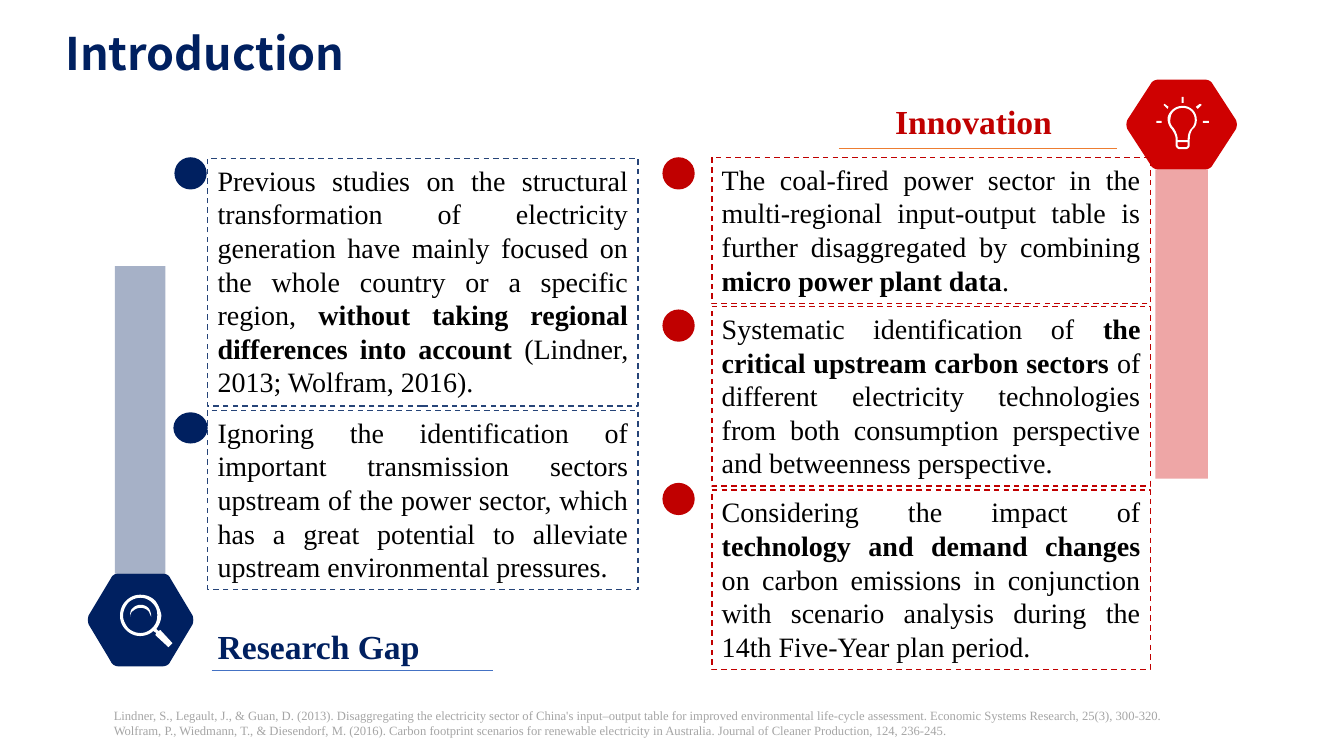
"""Build the Introduction slide: research gap on the left, innovation on the right."""
from lxml import etree
from pptx import Presentation
from pptx import util as u
from pptx.dml.color import RGBColor
from pptx.enum import dml, shapes, text
from pptx.oxml import ns

SERIF, SANS = "Times New Roman", "Noto Sans CJK SC"
NAVY, RED, BADGE_RED, BLUE_DASH = "002060", "C00000", "CF0101", "264478"
LEFT, CENTER, JUSTIFY = text.PP_ALIGN.LEFT, text.PP_ALIGN.CENTER, text.PP_ALIGN.JUSTIFY

COLUMNS = [
    (2.06, 4.27, BLUE_DASH, [
        (1.57, 2.46, [
            ("Previous studies on the structural transformation of electricity generation have mainly "
             "focused on the whole country or a specific region, ", False),
            ("without taking regional differences into account ", True),
            ("(Lindner, 2013; Wolfram, 2016).", False)]),
        (4.07, 1.78, [
            ("Ignoring the identification of important transmission sectors upstream of the power sector, "
             "which has a great potential to alleviate upstream environmental pressures.", False)]),
    ]),
    (7.06, 4.35, RED, [
        (1.56, 1.45, [
            ("The coal-fired power sector in the multi-regional input-output table is further "
             "disaggregated by combining ", False),
            ("micro power plant data", True), (".", False)]),
        (3.04, 1.78, [
            ("Systematic identification of ", False),
            ("the critical upstream carbon sectors", True),
            (" of different electricity technologies from both consumption perspective and "
             "betweenness perspective.", False)]),
        (4.86, 1.78, [
            ("Considering the impact of ", False),
            ("technology and demand changes ", True),
            ("on carbon emissions in conjunction with scenario analysis during the 14th Five-Year "
             "plan period.", False)]),
    ]),
]
DOTS = [(1.73, 1.56, 0.32, 0.32, NAVY), (1.72, 4.09, 0.34, 0.31, NAVY),
        (6.57, 1.56, 0.32, 0.32, RED), (6.57, 3.07, 0.32, 0.32, RED), (6.57, 4.79, 0.32, 0.32, RED)]
BARS = [(1.14, 2.64, 0.5, 3.05, NAVY), (11.46, 1.68, 0.52, 3.07, BADGE_RED)]
BADGES = [(0.87, 5.69, 1.05, 0.92, NAVY), (11.17, 0.79, 1.1, 0.89, BADGE_RED)]
RULES = [(2.1, 4.89, 6.65, "4472C4"), (8.32, 11.08, 1.47, "ED7D31")]
REFERENCES = [
    "Lindner, S., Legault, J., & Guan, D. (2013). Disaggregating the electricity sector of China's "
    "input–output table for improved environmental life-cycle assessment. Economic Systems Research, "
    "25(3), 300-320.",
    "Wolfram, P., Wiedmann, T., & Diesendorf, M. (2016). Carbon footprint scenarios for renewable "
    "electricity in Australia. Journal of Cleaner Production, 124, 236-245.",
]

HEXAGON = [[(0.99, 0.45), (0.78, 0.05), (0.77, 0.02, 0.74, 0, 0.71, 0), (0.29, 0),
            (0.26, 0, 0.23, 0.02, 0.22, 0.05), (0.01, 0.45), (0, 0.48, 0, 0.52, 0.01, 0.55),
            (0.22, 0.95), (0.23, 0.98, 0.26, 1, 0.29, 1), (0.71, 1),
            (0.74, 1, 0.77, 0.98, 0.78, 0.95), (0.99, 0.55), (1, 0.52, 1, 0.48, 0.99, 0.45)]]
MAGNIFIER = [
    [(1.47, 6.03), (1.49, 6.05, 1.5, 6.09, 1.5, 6.12), (1.49, 6.1, 1.48, 6.07, 1.47, 6.06),
     (1.43, 6.02, 1.36, 6.02, 1.32, 6.06), (1.3, 6.07, 1.29, 6.1, 1.29, 6.12),
     (1.29, 6.09, 1.29, 6.05, 1.32, 6.03), (1.36, 5.99, 1.43, 5.99, 1.47, 6.03)],
    [(1.71, 6.38), (1.67, 6.42), (1.54, 6.3), (1.55, 6.28), (1.52, 6.26),
     (1.49, 6.29, 1.44, 6.31, 1.39, 6.31), (1.34, 6.31, 1.29, 6.29, 1.25, 6.25),
     (1.21, 6.21, 1.19, 6.16, 1.19, 6.11), (1.19, 6.05, 1.21, 6, 1.25, 5.96),
     (1.29, 5.92, 1.34, 5.9, 1.39, 5.9), (1.45, 5.9, 1.5, 5.92, 1.54, 5.96),
     (1.57, 6, 1.59, 6.05, 1.6, 6.1), (1.6, 6.15, 1.58, 6.2, 1.55, 6.24),
     (1.57, 6.26), (1.59, 6.25)],
    [(1.51, 6.23), (1.55, 6.19, 1.56, 6.15, 1.56, 6.1), (1.56, 6.06, 1.55, 6.02, 1.51, 5.98),
     (1.48, 5.95, 1.44, 5.93, 1.39, 5.93), (1.35, 5.93, 1.3, 5.95, 1.27, 5.98),
     (1.24, 6.02, 1.22, 6.06, 1.22, 6.11), (1.22, 6.15, 1.24, 6.19, 1.27, 6.23),
     (1.3, 6.26, 1.35, 6.28, 1.39, 6.28), (1.44, 6.28, 1.48, 6.26, 1.51, 6.23)],
]
BULB = [
    [(11.68, 1.41), (11.68, 1.44), (11.68, 1.45, 11.69, 1.46, 11.7, 1.46), (11.76, 1.46),
     (11.77, 1.46, 11.78, 1.45, 11.78, 1.44), (11.78, 1.41)],
    [(11.73, 1.07), (11.66, 1.07, 11.61, 1.12, 11.61, 1.17), (11.6, 1.21, 11.61, 1.24, 11.64, 1.27),
     (11.66, 1.3, 11.68, 1.34, 11.68, 1.38), (11.68, 1.39), (11.78, 1.39), (11.78, 1.38),
     (11.78, 1.34, 11.79, 1.3, 11.82, 1.27), (11.84, 1.25, 11.85, 1.22, 11.85, 1.19),
     (11.85, 1.12, 11.8, 1.07, 11.73, 1.07)],
    [(11.73, 1.05), (11.81, 1.05, 11.87, 1.11, 11.87, 1.19), (11.87, 1.22, 11.86, 1.26, 11.83, 1.28),
     (11.81, 1.31, 11.8, 1.34, 11.8, 1.38), (11.8, 1.44), (11.8, 1.46, 11.78, 1.48, 11.76, 1.48),
     (11.7, 1.48), (11.68, 1.48, 11.66, 1.46, 11.66, 1.44), (11.66, 1.38),
     (11.66, 1.34, 11.64, 1.31, 11.62, 1.28), (11.59, 1.25, 11.58, 1.21, 11.58, 1.17),
     (11.59, 1.11, 11.65, 1.05, 11.73, 1.05)],
    [(11.93, 1.2), (11.99, 1.2), (11.99, 1.22), (11.93, 1.22)],
    [(11.47, 1.2), (11.52, 1.2), (11.52, 1.22), (11.47, 1.22)],
    [(11.9, 1.03), (11.92, 1.04), (11.88, 1.08), (11.86, 1.06)],
    [(11.55, 1.03), (11.59, 1.06), (11.58, 1.08), (11.54, 1.04)],
    [(11.72, 0.96), (11.74, 0.96), (11.74, 1.02), (11.72, 1.02)],
]


def rgb(color):
    return RGBColor.from_string(color)


def paint(sp, fill=None, dash=None, alpha=None):
    sp.shadow.inherit = False
    if fill:
        sp.fill.solid()
        sp.fill.fore_color.rgb = rgb(fill)
    else:
        sp.fill.background()
    if alpha:
        clr = sp.fill._xPr.find(".//" + ns.qn("a:srgbClr"))
        etree.SubElement(clr, ns.qn("a:alpha")).set("val", str(alpha * 1000))
    if dash:
        sp.line.color.rgb = rgb(dash)
        sp.line.width = u.Pt(1)
        sp.line.dash_style = dml.MSO_LINE.DASH
    else:
        sp.line.fill.background()


def add_preset(s, kind, box, **style):
    sp = s.shapes.add_shape(kind, *map(u.Inches, box))
    paint(sp, **style)
    return sp


def flatten(contour, steps=8):
    pts = [contour[0]]
    for seg in contour[1:]:
        if len(seg) == 2:
            pts.append(seg)
            continue
        ctrl = [pts[-1], seg[:2], seg[2:4], seg[4:]]
        for i in range(1, steps + 1):
            t = i / steps
            weights = ((1 - t) ** 3, 3 * t * (1 - t) ** 2, 3 * t * t * (1 - t), t ** 3)
            pts.append(tuple(sum(w * c[k] for w, c in zip(weights, ctrl)) for k in (0, 1)))
    return pts


def add_outline(s, contours, fill, box=(0, 0, 1, 1)):
    left, top, w, h = box
    loops = [[(u.Inches(left + x * w), u.Inches(top + y * h)) for x, y in flatten(c)] for c in contours]
    fb = s.shapes.build_freeform(*loops[0][0])
    fb.add_line_segments(loops[0][1:], close=True)
    for loop in loops[1:]:
        fb.move_to(*loop[0])
        fb.add_line_segments(loop[1:], close=True)
    paint(fb.convert_to_shape(), fill=fill)


def write(sp, paragraphs, size=20, font=SERIF, color="000000", align=LEFT, wrap=True,
          anchor=text.MSO_ANCHOR.TOP, spacing=None, grow=True):
    tf = sp.text_frame
    tf.word_wrap = wrap
    tf.vertical_anchor = anchor
    tf.auto_size = text.MSO_AUTO_SIZE.SHAPE_TO_FIT_TEXT if grow else text.MSO_AUTO_SIZE.NONE
    for i, runs in enumerate(paragraphs):
        p = tf.add_paragraph() if i else tf.paragraphs[0]
        p.alignment = align
        if spacing:
            p.line_spacing = spacing
        for words, bold in runs:
            r = p.add_run()
            r.text = words
            r.font.size, r.font.name, r.font.bold = u.Pt(size), font, bold
            r.font.color.rgb = rgb(color)


def add_label(s, box, paragraphs, **style):
    write(s.shapes.add_textbox(*map(u.Inches, box)), paragraphs, **style)


def main():
    prs = Presentation()
    prs.slide_width, prs.slide_height = u.Inches(13.33), u.Inches(7.5)
    s = prs.slides.add_slide(prs.slide_layouts[6])
    for *box, color in BADGES:
        add_outline(s, HEXAGON, color, box)
    for *box, color in BARS:
        add_preset(s, shapes.MSO_SHAPE.RECTANGLE, box, fill=color, alpha=35)
    for icon in (MAGNIFIER, BULB):
        add_outline(s, icon, "FFFFFF")
    for x1, x2, y, color in RULES:
        line = s.shapes.add_connector(shapes.MSO_CONNECTOR.STRAIGHT, *map(u.Inches, (x1, y, x2, y)))
        line.line.color.rgb = rgb(color)
        line.line.width = u.Pt(0.5)
        etree.SubElement(line._element.spPr, ns.qn("a:effectLst"))
    for left, width, color, boxes in COLUMNS:
        for top, height, runs in boxes:
            sp = add_preset(s, shapes.MSO_SHAPE.RECTANGLE, (left, top, width, height), dash=color)
            write(sp, [runs], align=JUSTIFY)
    for *box, color in DOTS:
        add_preset(s, shapes.MSO_SHAPE.OVAL, box, fill=color)
    add_label(s, (2.06, 6.16, 2.22, 0.5), [[("Research Gap", True)]], size=24, color=NAVY, wrap=False)
    add_label(s, (8.18, 0.95, 2.95, 0.5), [[("Innovation", True)]], size=24, color=RED, align=CENTER)
    add_label(s, (1.03, 6.97, 11.39, 0.4), [[(ref, False)] for ref in REFERENCES],
              size=9, color="A5A5A5", align=JUSTIFY)
    add_label(s, (0.55, 0.15, 4.52, 0.69), [[("Introduction", True)]], size=32, font=SANS, color=NAVY,
              anchor=text.MSO_ANCHOR.BOTTOM, spacing=1.5, grow=False)
    prs.save("out.pptx")


if __name__ == "__main__":
    main()
